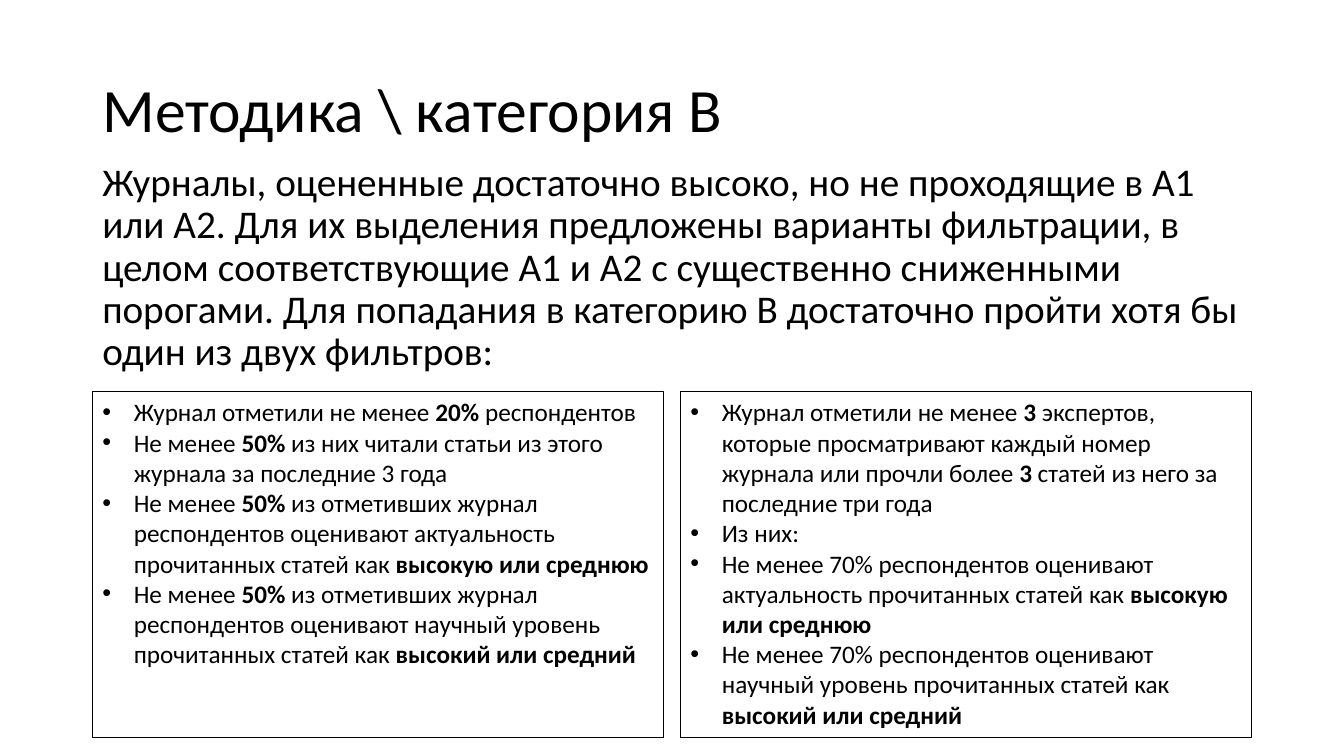
from lxml import etree
from pptx import Presentation
from pptx.dml.color import RGBColor
from pptx.enum.shapes import MSO_SHAPE
from pptx.enum.text import MSO_ANCHOR, MSO_AUTO_SIZE, PP_ALIGN
from pptx.oxml.ns import qn
from pptx.util import Pt

PX = 9525  # EMU per px, 96 px to the inch
RECTANGLE = MSO_SHAPE.RECTANGLE
TOP, MIDDLE = MSO_ANCHOR.TOP, MSO_ANCHOR.MIDDLE
NO_AUTOFIT = MSO_AUTO_SIZE.NONE
LEFT_ALIGNED = PP_ALIGN.LEFT

FONT = "Calibri"
COLOURS = {"text": "000000", "border": "000000"}

PAGE_SIZE = (1280, 720)
TITLE_BOX = (88, 38, 1104, 139)
INTRO_BOX = (88, 150, 1104, 212)
FILTERS_BOX = (88, 373, 1104, 329)
FILTER_GAP = 16
BULLET_INDENT = 30

TITLE = "Методика \\ категория B"
INTRO = (
    "Журналы, оцененные достаточно высоко, но не проходящие в A1 или А2. "
    "Для их выделения предложены варианты фильтрации, в целом соответствующие "
    "A1 и A2 с существенно сниженными порогами. Для попадания в категорию B "
    "достаточно пройти хотя бы один из двух фильтров:"
)
# Text between double asterisks is bold.
FILTERS = [
    [
        "Журнал отметили не менее **20%** респондентов",
        "Не менее **50%** из них читали статьи из этого журнала за последние 3 года",
        "Не менее **50%** из отметивших журнал респондентов оценивают актуальность "
        "прочитанных статей как **высокую или среднюю**",
        "Не менее **50%** из отметивших журнал респондентов оценивают научный уровень "
        "прочитанных статей как **высокий или средний**",
    ],
    [
        "Журнал отметили не менее **3** экспертов, которые просматривают каждый номер "
        "журнала или прочли более **3** статей из него за последние три года",
        "Из них:",
        "Не менее 70% респондентов оценивают актуальность прочитанных статей как "
        "**высокую или среднюю**",
        "Не менее 70% респондентов оценивают научный уровень прочитанных статей как "
        "**высокий или средний**",
    ],
]


def colour(name):
    return RGBColor.from_string(COLOURS[name])


def emu(box):
    return [length * PX for length in box]


def set_attributes(target, values):
    for name, value in values.items():
        setattr(target, name, value)


def prepare_frame(frame, anchor):
    set_attributes(frame, {
        "word_wrap": True,
        "auto_size": NO_AUTOFIT,
        "vertical_anchor": anchor,
    })


def write_para(para, text, size, **para_format):
    """Fill a paragraph, with every second part between ** set in bold."""
    set_attributes(para, {"alignment": LEFT_ALIGNED, **para_format})
    for index, part in enumerate(text.split("**")):
        if part:
            span = para.add_run()
            span.text = part
            set_attributes(span.font, {"name": FONT, "size": Pt(size), "bold": index % 2 == 1})
            span.font.color.rgb = colour("text")


def add_bullet(para):
    properties = para._p.get_or_add_pPr()
    properties.set("marL", str(BULLET_INDENT * PX))
    properties.set("indent", str(-BULLET_INDENT * PX))
    etree.SubElement(properties, qn("a:buFont")).set("typeface", "Arial")
    etree.SubElement(properties, qn("a:buChar")).set("char", "•")


def place_title(page, box):
    title = page.shapes.title
    set_attributes(title, dict(zip(("left", "top", "width", "height"), emu(box))))
    prepare_frame(title.text_frame, MIDDLE)
    write_para(title.text_frame.paragraphs[0], TITLE, 44, line_spacing=0.9)


def add_intro(page, box):
    frame = page.shapes.add_textbox(*emu(box)).text_frame
    prepare_frame(frame, TOP)
    write_para(frame.paragraphs[0], INTRO, 28, line_spacing=0.9, space_before=Pt(10))


def add_filter(page, box, conditions):
    panel = page.shapes.add_shape(RECTANGLE, *emu(box))
    panel.shadow.inherit = False
    panel.fill.background()
    panel.line.color.rgb = colour("border")
    panel.line.width = Pt(0.75)
    frame = panel.text_frame
    prepare_frame(frame, TOP)
    for index, condition in enumerate(conditions):
        para = frame.add_paragraph() if index else frame.paragraphs[0]
        write_para(para, condition, 18)
        add_bullet(para)


def add_filters(page, box):
    left, top, width, height = box
    panel_width = (width - FILTER_GAP * (len(FILTERS) - 1)) // len(FILTERS)
    for index, conditions in enumerate(FILTERS):
        panel_left = left + index * (panel_width + FILTER_GAP)
        add_filter(page, (panel_left, top, panel_width, height), conditions)


def main():
    deck = Presentation()
    deck.slide_width, deck.slide_height = emu(PAGE_SIZE)
    page = deck.slides.add_slide(deck.slide_layouts.get_by_name("Title Only"))
    place_title(page, TITLE_BOX)
    add_intro(page, INTRO_BOX)
    add_filters(page, FILTERS_BOX)
    deck.save("out.pptx")


if __name__ == "__main__":
    main()
